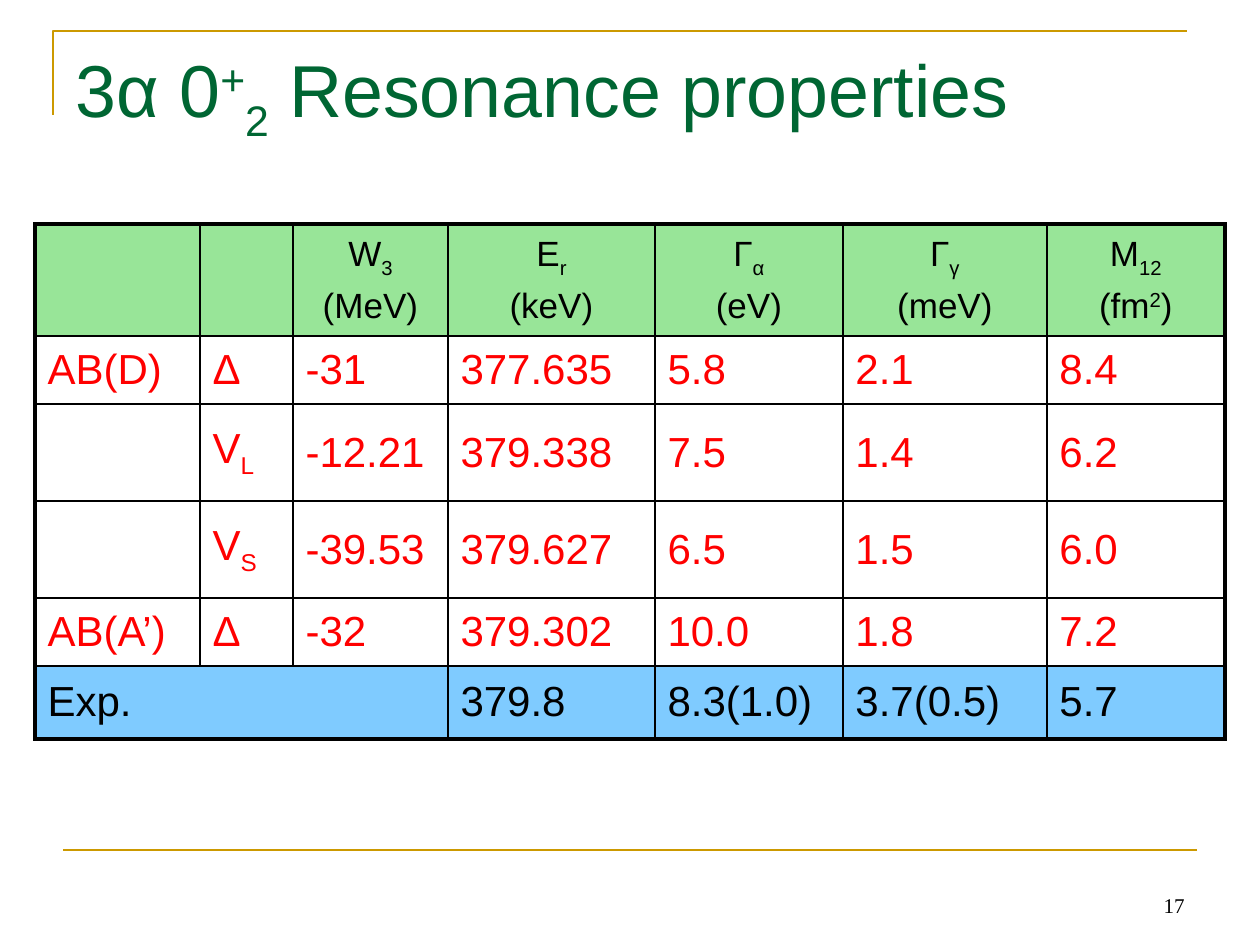
from pptx import Presentation
from pptx.dml.color import RGBColor
from pptx.enum.shapes import MSO_CONNECTOR
from pptx.enum.text import MSO_ANCHOR, PP_ALIGN
from pptx.oxml.ns import qn
from pptx.util import Pt
from lxml.etree import Element, SubElement

PX = 914400 / 126  # EMU in one px
COLORS = {"gold": "CC9900", "title": "006633", "head": "33CC33",
          "exp": "0099FF", "red": "FF0000", "black": "000000"}
SHIFTS = {"_": "-25000", "^": "30000"}

COLS = [165, 93, 155, 207, 188, 204, 178]
ROWS = [112, 68, 97, 97, 68, 73]
# In texts, "|" parts the runs; a run led by "_" is lowered, by "^" raised
DATA = [
    ["", "", "W|_3\n(MeV)", "E|_r\n(keV)", "Γ|_α\n(eV)", "Γ|_γ\n(meV)",
     "M|_12\n(fm|^2|)"],
    ["AB(D)", "Δ", "-31", "377.635", "5.8", "2.1", "8.4"],
    ["", "V|_L", "-12.21", "379.338", "7.5", "1.4", "6.2"],
    ["", "V|_S", "-39.53", "379.627", "6.5", "1.5", "6.0"],
    ["AB(A’)", "Δ", "-32", "379.302", "10.0", "1.8", "7.2"],
    ["Exp.", "", "", "379.8", "8.3(1.0)", "3.7(0.5)", "5.7"],
]


def emu(px):
    return round(px * PX)


def rgb(name):
    return RGBColor.from_string(COLORS[name])


def write(frame, text, size, color, font="Arial", align=PP_ALIGN.LEFT, gap=0):
    for i, line in enumerate(text.split("\n")):
        para = frame.add_paragraph() if i else frame.paragraphs[0]
        para.alignment = align
        para.space_before = Pt(gap)
        para.font.size = Pt(size)
        para.font.name = font
        para.font.color.rgb = rgb(color)
        for part in line.split("|"):
            if not part:
                continue
            run = para.add_run()
            shift = SHIFTS.get(part[0])
            run.text = part[1:] if shift else part
            if shift:
                run.font._element.set("baseline", shift)


def place(shape, left, top, width, height):
    shape.left, shape.top = emu(left), emu(top)
    shape.width, shape.height = emu(width), emu(height)


def add_title(slide, text):
    title = slide.shapes.title
    place(title, 63, 38, 1134, 137)
    title.text_frame.vertical_anchor = MSO_ANCHOR.TOP
    write(title.text_frame, text, 42, "title")


def add_frame(slide):
    # Corner at the top left
    path = slide.shapes.build_freeform(53, 115, scale=PX)
    path.add_line_segments([(53, 31), (1187, 31)], close=False)
    corner = path.convert_to_shape()
    corner.shadow.inherit = False
    corner.fill.background()
    # Rule at the foot
    rule = slide.shapes.add_connector(
        MSO_CONNECTOR.STRAIGHT, emu(63), emu(850), emu(1197), emu(850))
    for shape in (corner, rule):
        shape.line.color.rgb = rgb("gold")
        shape.line.width = Pt(1.5)
    SubElement(rule._element.spPr, qn("a:effectLst"))


def add_number(slide, text):
    box = slide.shapes.add_textbox(emu(903), emu(861), emu(294), emu(63))
    box.text_frame.word_wrap = True
    box.text_frame.vertical_anchor = MSO_ANCHOR.BOTTOM
    write(box.text_frame, text, 12, "black", "Times New Roman", PP_ALIGN.RIGHT)


def set_fill(cell, color):
    if color is None:
        cell.fill.background()
        return
    cell.fill.solid()
    cell.fill.fore_color.rgb = rgb(color)
    tint = cell._tc.tcPr.find(".//" + qn("a:srgbClr"))
    SubElement(tint, qn("a:alpha"), val="50000")


def set_edges(cell, outer):
    # Edges come before the fill in the cell properties
    props = cell._tc.get_or_add_tcPr()
    for i, side in enumerate("LRTB"):
        width = Pt(2.25 if side in outer else 1)
        edge = Element(qn("a:ln" + side), w=str(width))
        fill = SubElement(edge, qn("a:solidFill"))
        SubElement(fill, qn("a:srgbClr"), val=COLORS["black"])
        props.insert(i, edge)


def add_grid(slide):
    last, end = len(ROWS) - 1, len(COLS) - 1
    table = slide.shapes.add_table(
        len(ROWS), len(COLS), emu(35), emu(224),
        emu(sum(COLS)), emu(sum(ROWS))).table
    table.first_row = table.horz_banding = False
    for col, width in zip(table.columns, COLS):
        col.width = emu(width)
    for row, height in zip(table.rows, ROWS):
        row.height = emu(height)
    table.cell(last, 0).merge(table.cell(last, 2))

    for r, texts in enumerate(DATA):
        head = r == 0
        fill = {0: "head", last: "exp"}.get(r)
        size = 20 if head else 24
        color = "black" if fill else "red"
        align = PP_ALIGN.CENTER if head else PP_ALIGN.LEFT
        for c, text in enumerate(texts):
            cell = table.cell(r, c)
            cell.vertical_anchor = MSO_ANCHOR.MIDDLE
            set_fill(cell, fill)
            outer = {0: "L", end: "R"}.get(c, "") + {0: "T", last: "B"}.get(r, "")
            set_edges(cell, outer)
            write(cell.text_frame, text, size, color, align=align, gap=size / 5)


def main():
    deck = Presentation()
    deck.slide_width, deck.slide_height = emu(1260), emu(945)
    slide = deck.slides.add_slide(deck.slide_layouts[5])
    add_frame(slide)
    add_title(slide, "3α 0|^+|_2| Resonance properties")
    add_number(slide, "17")
    add_grid(slide)
    deck.save("out.pptx")


if __name__ == "__main__":
    main()
